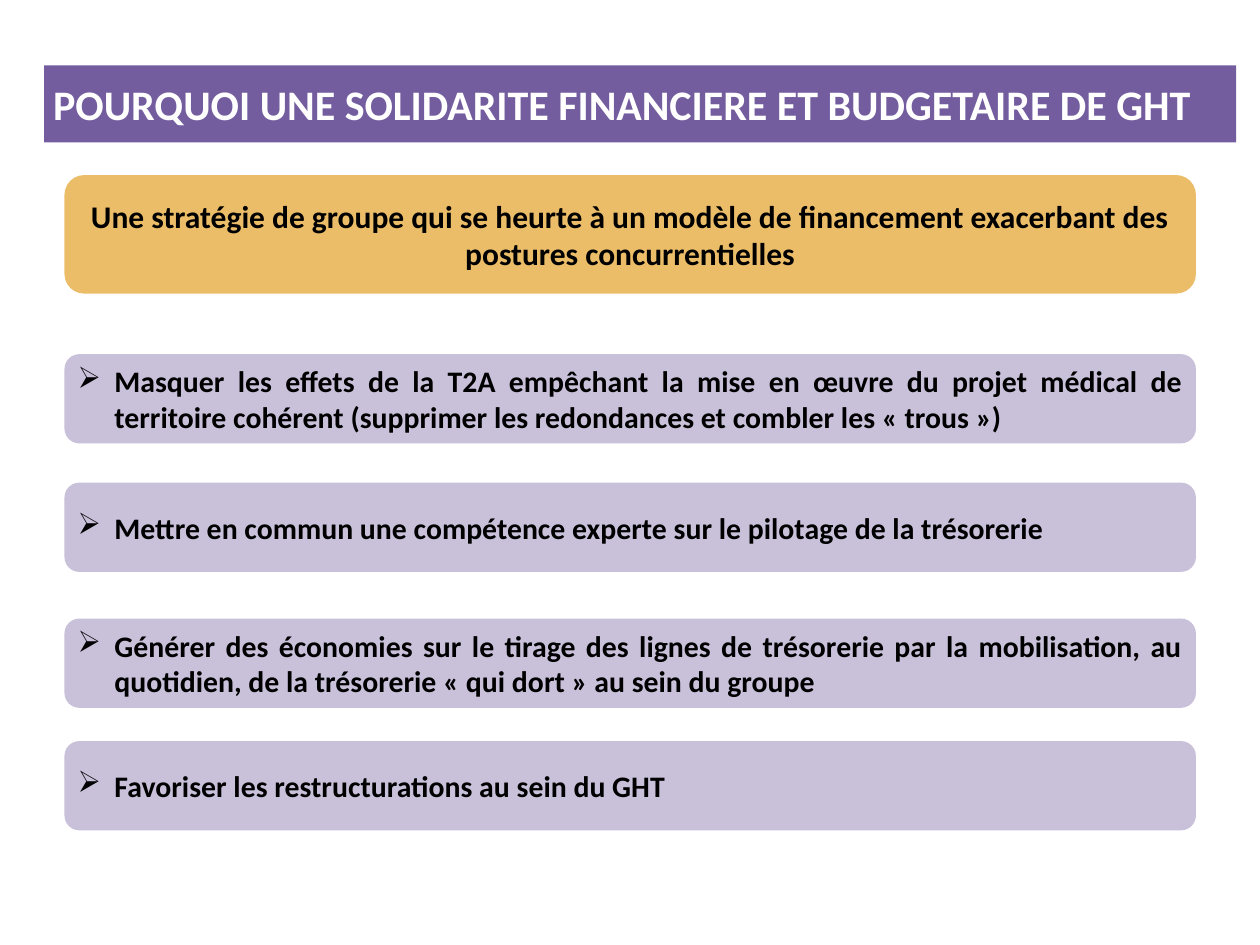
from lxml import etree
from pptx import Presentation
from pptx.dml.color import RGBColor
from pptx.enum.shapes import MSO_SHAPE
from pptx.enum.text import MSO_ANCHOR, MSO_AUTO_SIZE, PP_ALIGN
from pptx.oxml.ns import qn
from pptx.util import Cm, Pt


def rgb(color):
    return RGBColor.from_string(color)


def fill_banner(sp, text, fill, size, color, align):
    """Fill the shape and set its text in bold, centred vertically."""
    sp.fill.solid()
    sp.fill.fore_color.rgb = rgb(fill)
    tf = sp.text_frame
    tf.text = text
    tf.word_wrap = True
    tf.auto_size = MSO_AUTO_SIZE.NONE
    tf.vertical_anchor = MSO_ANCHOR.MIDDLE
    tf.margin_left = tf.margin_right = Cm(0.18)
    tf.margin_top = tf.margin_bottom = Cm(0.1)
    p = tf.paragraphs[0]
    p.alignment = align
    font = p.runs[0].font
    font.name = "Calibri"
    font.size = Pt(size)
    font.bold = True
    font.color.rgb = rgb(color)
    return p


prs = Presentation()
prs.slide_width, prs.slide_height = Cm(25.4), Cm(19.05)
s = prs.slides.add_slide(prs.slide_layouts[5])

title = s.shapes.title
title.left, title.top, title.width, title.height = Cm(0.89), Cm(1.32), Cm(24.03), Cm(1.55)
fill_banner(title, "POURQUOI UNE SOLIDARITE FINANCIERE ET BUDGETAIRE DE GHT",
            "735D9F", 24, "FFFFFF", PP_ALIGN.LEFT)

# top, height, fill, text size, alignment, text
STRATEGY = (3.53, 2.39, "ECBD68", 18, PP_ALIGN.CENTER,
            "Une stratégie de groupe qui se heurte à un modèle de financement "
            "exacerbant des postures concurrentielles")
GOALS = [
    (7.14, "Masquer les effets de la T2A empêchant la mise en œuvre du projet médical "
           "de territoire cohérent (supprimer les redondances et combler les « trous »)"),
    (9.73, "Mettre en commun une compétence experte sur le pilotage de la trésorerie"),
    (12.47, "Générer des économies sur le tirage des lignes de trésorerie par la mobilisation, "
            "au quotidien, de la trésorerie « qui dort » au sein du groupe"),
    (14.94, "Favoriser les restructurations au sein du GHT"),
]
boxes = [STRATEGY] + [(top, 1.8, "C9C0DA", 17, PP_ALIGN.JUSTIFY, text) for top, text in GOALS]

for top, height, fill, size, align, text in boxes:
    sp = s.shapes.add_shape(MSO_SHAPE.ROUNDED_RECTANGLE, Cm(1.3), Cm(top), Cm(22.81), Cm(height))
    sp.shadow.inherit = False
    sp.line.fill.background()
    p = fill_banner(sp, text, fill, size, "000000", align)
    if align == PP_ALIGN.JUSTIFY:
        pPr = p._p.get_or_add_pPr()
        pPr.set("marL", str(Cm(0.74)))
        pPr.set("indent", str(-Cm(0.74)))
        etree.SubElement(pPr, qn("a:buChar"), char="➢")

prs.save("out.pptx")
